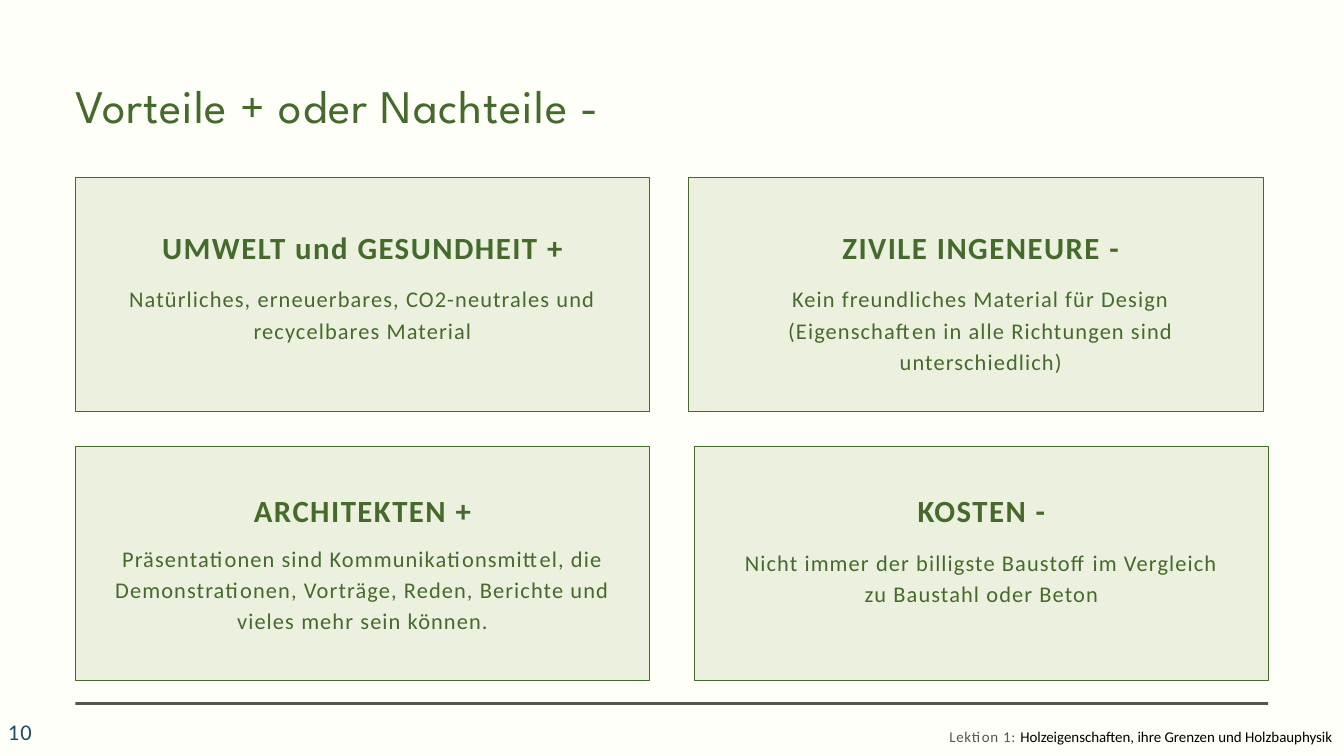
from dataclasses import dataclass

import pptx
import pptx.dml.color
import pptx.enum.shapes
import pptx.enum.text
import pptx.util
from pptx.util import Inches

ALIGN = pptx.enum.text.PP_ALIGN
ANCHOR = pptx.enum.text.MSO_ANCHOR
RECTANGLE = pptx.enum.shapes.MSO_SHAPE.RECTANGLE


@dataclass(frozen=True)
class Style:
    size: float
    color: str
    leading: float = None
    tracking: float = 0
    bold: bool = False
    font: str = "Calibri"


@dataclass(frozen=True)
class Theme:
    background: str = "FEFFF8"
    card: str = "EBF1DE"
    green: str = "456A2C"
    rule: str = "52584D"
    title: Style = Style(50, "456A2C", 66.8, 1, font="League Spartan")
    heading: Style = Style(33, "456A2C", 41.2, 1.6, True)
    body: Style = Style(24, "456A2C", 33.6, 1.2)
    number: Style = Style(24, "1E4D65", tracking=1.2)
    lesson: Style = Style(16, "52584D", 22.4, 0.8)
    topic: Style = Style(16, "000000", 22.4)


THEME = Theme()

CARD_WIDTH, CARD_HEIGHT = 8.55, 3.48
CARDS = [
    (1.12, 2.64, 0.58, 0.74, 1.54, "UMWELT und GESUNDHEIT +",
     "Natürliches, erneuerbares, CO2-neutrales und recycelbares Material"),
    (10.25, 2.64, 0.65, 0.74, 1.54, "ZIVILE INGENEURE -",
     "Kein freundliches Material für Design (Eigenschaften in alle Richtungen sind unterschiedlich)"),
    (1.12, 6.64, 0.58, 0.66, 1.4, "ARCHITEKTEN +",
     "Präsentationen sind Kommunikationsmittel, die Demonstrationen, Vorträge, Reden, "
     "Berichte und vieles mehr sein können."),
    (10.33, 6.64, 0.58, 0.66, 1.46, "KOSTEN -",
     "Nicht immer der billigste Baustoff im Vergleich zu Baustahl oder Beton"),
]


def rgb(value):
    return pptx.dml.color.RGBColor.from_string(value)


def format_span(span, style):
    span.font.name = style.font
    span.font.size = pptx.util.Pt(style.size)
    span.font.bold = style.bold
    span.font.color.rgb = rgb(style.color)
    span.font._element.set("spc", str(round(style.tracking * 100)))


def write(shape, spans, align, anchor=ANCHOR.TOP, inset=(0, 0)):
    frame = shape.text_frame
    frame.word_wrap = True
    frame.auto_size = pptx.enum.text.MSO_AUTO_SIZE.NONE
    frame.vertical_anchor = anchor
    frame.margin_left = frame.margin_right = Inches(inset[0])
    frame.margin_top = frame.margin_bottom = Inches(inset[1])
    para = frame.paragraphs[0]
    para.alignment = align
    leading = spans[0][1].leading
    if leading:
        para.line_spacing = pptx.util.Pt(leading)
    for text, style in spans:
        span = para.add_run()
        span.text = text
        format_span(span, style)


def add_text(page, box, spans, align, **options):
    shape = page.shapes.add_textbox(*map(Inches, box))
    write(shape, spans, align, **options)


def add_rectangle(page, box, fill, line=None):
    shape = page.shapes.add_shape(RECTANGLE, *map(Inches, box))
    shape.shadow.inherit = False
    shape.fill.solid()
    shape.fill.fore_color.rgb = rgb(fill)
    if line:
        shape.line.color.rgb = rgb(line)
        shape.line.width = pptx.util.Pt(0.75)
    else:
        shape.line.fill.background()


def place_title(page, box, text):
    title = page.shapes.title
    title.left, title.top, title.width, title.height = map(Inches, box)
    write(title, [(text, THEME.title)], ALIGN.LEFT)


def add_card(page, box, inset, heading_drop, body_drop, heading, body):
    left, top, width, height = box
    text_width = width - 2 * 0.58
    add_rectangle(page, box, THEME.card, THEME.green)
    add_text(page, (left + inset, top + heading_drop, text_width, 0.55),
             [(heading, THEME.heading)], ALIGN.CENTER)
    add_text(page, (left + inset, top + body_drop, text_width, 1.43),
             [(body, THEME.body)], ALIGN.CENTER)


def add_footer(page, box):
    left, top, width, height = box
    add_rectangle(page, (1.12, top, 17.75, 0.04), THEME.rule)
    add_text(page, (left + 0.02, top + 0.24, 2.33, 0.4), [("10", THEME.number)],
             ALIGN.LEFT, anchor=ANCHOR.MIDDLE, inset=(0.1, 0.05))
    add_text(page, (left + width / 2, top + 0.34, width / 2 - 0.17, 0.4),
             [("Lektion 1: ", THEME.lesson),
              ("Holzeigenschaften, ihre Grenzen und Holzbauphysik", THEME.topic)],
             ALIGN.RIGHT)


def main():
    deck = pptx.Presentation()
    deck.slide_width, deck.slide_height = Inches(20), Inches(11.25)
    page = deck.slides.add_slide(deck.slide_layouts.get_by_name("Title Only"))
    page.background.fill.solid()
    page.background.fill.fore_color.rgb = rgb(THEME.background)
    place_title(page, (1.12, 1.05, 11.12, 0.94), "Vorteile + oder Nachteile -")
    for left, top, *content in CARDS:
        add_card(page, (left, top, CARD_WIDTH, CARD_HEIGHT), *content)
    add_footer(page, (0, 10.45, 20, 0.8))
    deck.save("out.pptx")


if __name__ == "__main__":
    main()
